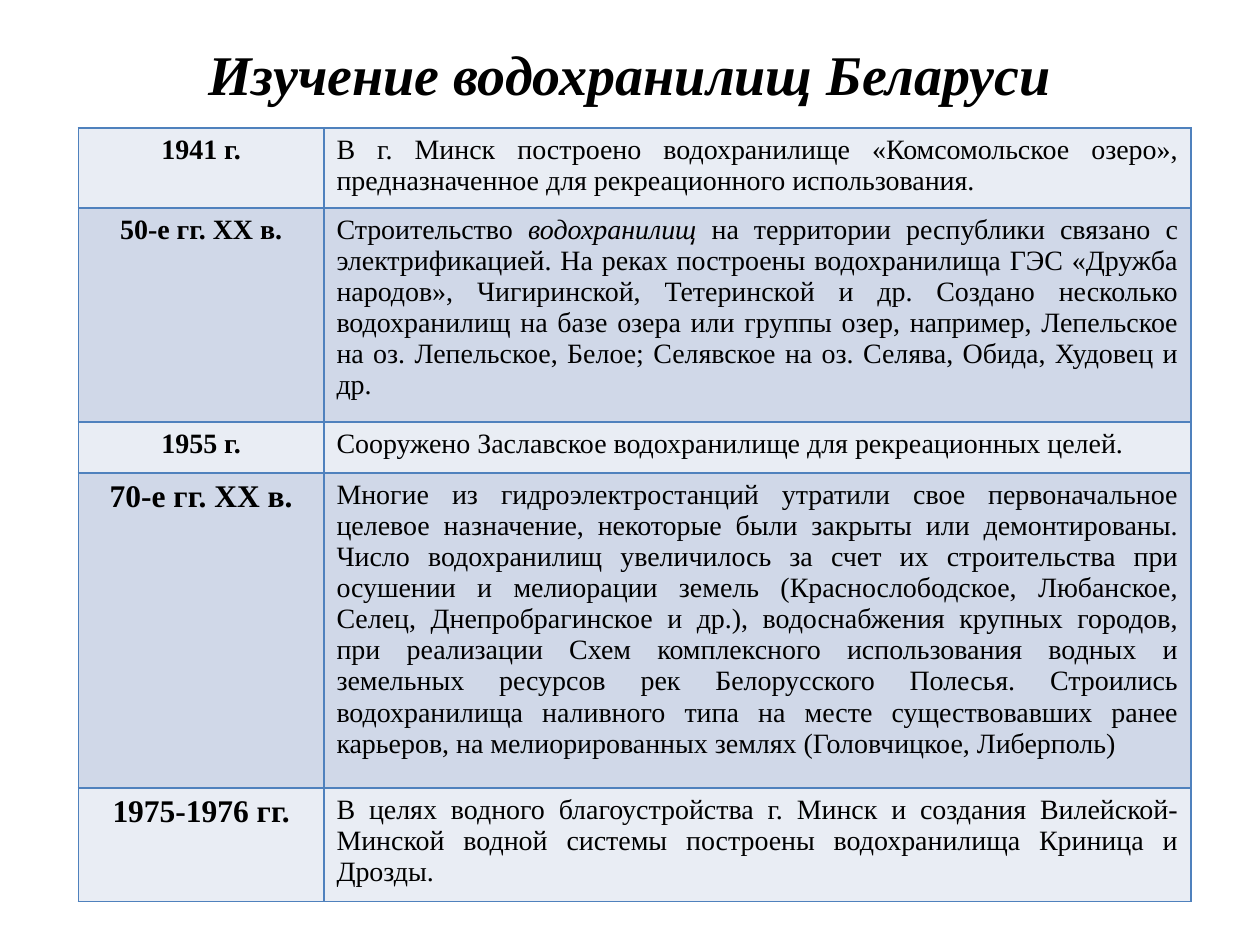
from lxml import etree
from pptx import Presentation
from pptx.dml.color import RGBColor
from pptx.enum.text import MSO_ANCHOR, PP_ALIGN
from pptx.oxml.ns import qn
from pptx.util import Cm, Pt

CENTER, JUSTIFY = PP_ALIGN.CENTER, PP_ALIGN.JUSTIFY
MIDDLE = MSO_ANCHOR.MIDDLE

BLACK = RGBColor(0x00, 0x00, 0x00)
BLUE = RGBColor(0x4F, 0x81, 0xBD)
BANDS = RGBColor(0xE9, 0xED, 0xF4), RGBColor(0xD0, 0xD8, 0xE8)

COLUMN_WIDTHS = 4.95, 17.48

# Row height in cm, period, size of the period, runs of the event as (text, italic)
HISTORY = [
    (1.51, "1941 г.", 16, [
        ("В г. Минск построено водохранилище «Комсомольское озеро», "
         "предназначенное для рекреационного использования.", False)]),
    (4.16, "50-е гг. ХХ в.", 16, [
        ("Строительство ", False),
        ("водохранилищ", True),
        (" на территории республики связано с электрификацией. На реках построены "
         "водохранилища ГЭС «Дружба народов», Чигиринской, Тетеринской и др. "
         "Создано несколько водохранилищ на базе озера или группы озер, например, "
         "Лепельское на оз. Лепельское, Белое; Селявское на оз. Селява, Обида, "
         "Худовец и др.", False)]),
    (1.03, "1955 г.", 16, [
        ("Сооружено Заславское водохранилище для рекреационных целей.", False)]),
    (5.89, "70-е гг. ХХ в.", 18, [
        ("Многие из гидроэлектростанций утратили свое первоначальное целевое "
         "назначение, некоторые были закрыты или демонтированы. Число водохранилищ "
         "увеличилось за счет их строительства при осушении и мелиорации земель "
         "(Краснослободское, Любанское, Селец, Днепробрагинское и др.), водоснабжения "
         "крупных городов, при реализации Схем комплексного использования водных и "
         "земельных ресурсов рек Белорусского Полесья. Строились водохранилища "
         "наливного типа на месте существовавших ранее карьеров, на мелиорированных "
         "землях (Головчицкое, Либерполь)", False)]),
    (2.13, "1975-1976 гг.", 18, [
        ("В целях водного благоустройства г. Минск и создания Вилейской-Минской "
         "водной системы построены водохранилища Криница и Дрозды.", False)]),
]


class SlideBuilder:
    font_name = "Times New Roman"

    def __init__(self, slide):
        self.slide = slide

    def add_runs(self, paragraph, runs, alignment, size, bold=False):
        """Fill a paragraph with (text, italic) runs."""
        paragraph.alignment = alignment
        for text, italic in runs:
            run = paragraph.add_run()
            run.text = text
            formats = {"name": self.font_name, "size": Pt(size),
                       "bold": bold, "italic": italic}
            for attribute, value in formats.items():
                setattr(run.font, attribute, value)
            run.font.color.rgb = BLACK

    def title(self, text, left, top, width, height):
        box = self.slide.shapes.add_textbox(Cm(left), Cm(top), Cm(width), Cm(height))
        frame = box.text_frame
        frame.word_wrap = True
        frame.vertical_anchor = MIDDLE
        self.add_runs(frame.paragraphs[0], [(text, True)], CENTER, 32, bold=True)

    def outline(self, cell):
        properties = cell._tc.get_or_add_tcPr()
        for side in ("a:lnL", "a:lnR", "a:lnT", "a:lnB"):
            line = etree.SubElement(properties, qn(side), w=str(Pt(1)))
            fill = etree.SubElement(line, qn("a:solidFill"))
            etree.SubElement(fill, qn("a:srgbClr"), val=str(BLUE))

    def history_table(self, history, left, top):
        height = sum(row[0] for row in history)
        table = self.slide.shapes.add_table(
            len(history), len(COLUMN_WIDTHS), Cm(left), Cm(top),
            Cm(sum(COLUMN_WIDTHS)), Cm(height)).table
        table.first_row = False
        for column, width in zip(table.columns, COLUMN_WIDTHS):
            column.width = Cm(width)
        for index, (row_height, period, period_size, event) in enumerate(history):
            row = table.rows[index]
            row.height = Cm(row_height)
            for cell in row.cells:
                self.outline(cell)
                cell.fill.solid()
                cell.fill.fore_color.rgb = BANDS[index % 2]
            period_text, event_text = (
                cell.text_frame.paragraphs[0] for cell in row.cells)
            self.add_runs(period_text, [(period, False)], CENTER, period_size, bold=True)
            self.add_runs(event_text, event, JUSTIFY, 16)


def main():
    presentation = Presentation()
    presentation.slide_width, presentation.slide_height = Cm(25.4), Cm(19.05)
    slide = presentation.slides.add_slide(presentation.slide_layouts[6])
    builder = SlideBuilder(slide)
    builder.title("Изучение водохранилищ Беларуси", 1.27, 0.76, 22.86, 1.42)
    builder.history_table(HISTORY, 1.58, 2.58)
    presentation.save("out.pptx")


if __name__ == "__main__":
    main()
